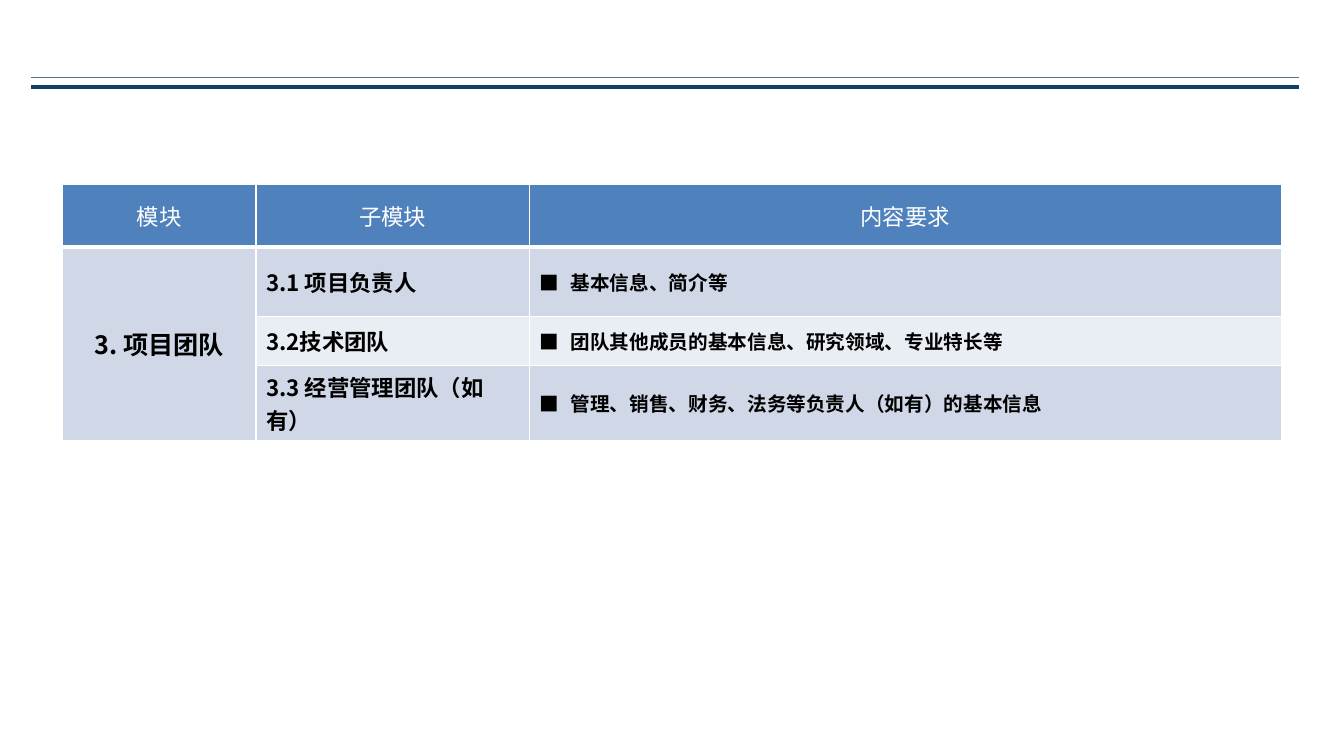
import pptx
import pptx.dml.color
import pptx.enum.shapes
import pptx.enum.text
import pptx.oxml.ns
import pptx.util
from lxml import etree
from pptx.util import Inches

FONT = "Noto Sans CJK SC"
COLORS = {
    "thin_rule": "537285",
    "thick_rule": "124062",
    "header": "4F81BD",
    "band_dark": "D0D8E8",
    "band_light": "E9EDF4",
    "white": "FFFFFF",
    "black": "000000",
}
HEADINGS = ["模块", "子模块", "内容要求"]
MODULE = "3. 项目团队"
SUBMODULES = [
    ("3.1 项目负责人", "基本信息、简介等"),
    ("3.2技术团队", "团队其他成员的基本信息、研究领域、专业特长等"),
    ("3.3 经营管理团队（如有）", "管理、销售、财务、法务等负责人（如有）的基本信息"),
]
COLUMN_WIDTHS = [1.92, 2.71, 7.46]
ROW_HEIGHTS = [0.62, 0.69, 0.49, 0.68]


def rgb(name):
    return pptx.dml.color.RGBColor.from_string(COLORS[name])


def add_child(parent, tag, **attributes):
    return etree.SubElement(parent, pptx.oxml.ns.qn(tag), **attributes)


def add_rule(slide, y, color, weight):
    rule = slide.shapes.add_connector(
        pptx.enum.shapes.MSO_CONNECTOR.STRAIGHT,
        Inches(12.88), Inches(y), Inches(0.31), Inches(y))
    rule.line.color.rgb = rgb(color)
    rule.line.width = pptx.util.Pt(weight)
    add_child(rule._element.spPr, "a:effectLst")


def style_cell(cell, fill, bottom_weight=1):
    # Borders come before the fill in the cell properties
    properties = cell._tc.get_or_add_tcPr()
    for side, weight in zip("LRTB", (1, 1, 1, bottom_weight)):
        border = add_child(properties, f"a:ln{side}", w=str(pptx.util.Pt(weight)))
        add_child(add_child(border, "a:solidFill"), "a:srgbClr", val=COLORS["white"])
    cell.fill.solid()
    cell.fill.fore_color.rgb = rgb(fill)
    cell.vertical_anchor = pptx.enum.text.MSO_ANCHOR.MIDDLE


def write_cell(cell, text, size, color="black", bold=True, centered=False, bulleted=False):
    paragraph = cell.text_frame.paragraphs[0]
    paragraph.text = text
    if centered:
        paragraph.alignment = pptx.enum.text.PP_ALIGN.CENTER
    if bulleted:
        properties = paragraph._p.get_or_add_pPr()
        properties.set("marL", str(Inches(0.31)))
        properties.set("indent", str(Inches(-0.31)))
        add_child(properties, "a:buFont", typeface=FONT)
        add_child(properties, "a:buChar", char="■")
    font = paragraph.font
    font.size = pptx.util.Pt(size)
    font.bold = bold
    font.color.rgb = rgb(color)
    font.name = FONT
    add_child(font._element, "a:ea", typeface=FONT)


def add_team_table(slide):
    table = slide.shapes.add_table(
        len(ROW_HEIGHTS), len(COLUMN_WIDTHS), Inches(0.62), Inches(1.83),
        Inches(sum(COLUMN_WIDTHS)), Inches(sum(ROW_HEIGHTS))).table
    for column, width in zip(table.columns, COLUMN_WIDTHS):
        column.width = Inches(width)
    for row, height in zip(table.rows, ROW_HEIGHTS):
        row.height = Inches(height)

    # Header row
    for column, heading in enumerate(HEADINGS):
        cell = table.cell(0, column)
        style_cell(cell, "header", bottom_weight=3)
        write_cell(cell, heading, 16, "white", bold=False, centered=True)

    # Submodules on alternating bands
    for row, (submodule, requirement) in enumerate(SUBMODULES, start=1):
        band = "band_dark" if row % 2 else "band_light"
        style_cell(table.cell(row, 0), "band_dark")
        for column in (1, 2):
            style_cell(table.cell(row, column), band)
        write_cell(table.cell(row, 1), submodule, 16)
        write_cell(table.cell(row, 2), requirement, 14, bulleted=True)

    # Module name spanning its submodules
    module = table.cell(1, 0)
    module.merge(table.cell(len(SUBMODULES), 0))
    write_cell(module, MODULE, 18, centered=True)


def main():
    deck = pptx.Presentation()
    deck.slide_width = Inches(13.33)
    deck.slide_height = Inches(7.5)
    slide = deck.slides.add_slide(deck.slide_layouts[6])

    # Double rule below the title area
    add_rule(slide, 0.77, "thin_rule", 1)
    add_rule(slide, 0.86, "thick_rule", 3)

    add_team_table(slide)
    deck.save("out.pptx")


if __name__ == "__main__":
    main()
